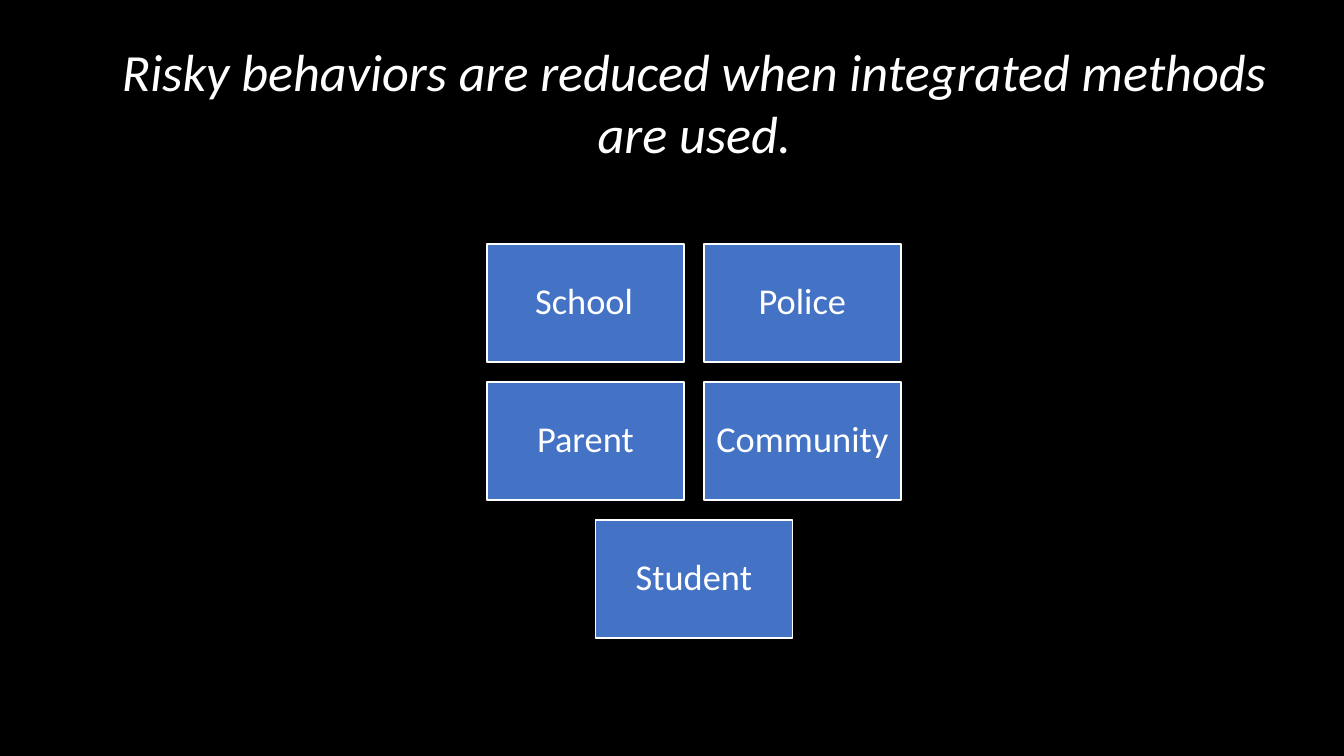
from pptx import Presentation
from pptx.dml.color import RGBColor
from pptx.enum.shapes import MSO_SHAPE as Shape
from pptx.enum.text import MSO_ANCHOR as Anchor, MSO_AUTO_SIZE as AutoSize, PP_ALIGN as Align
from pptx.util import Emu, Pt

TITLE = "Risky behaviors are reduced when integrated methods are used."
ROWS = [["School\t", "Police"], ["Parent", "Community"], ["Student"]]
BLACK, WHITE, BLUE = "000000", "FFFFFF", "4472C4"
SLIDE_WIDTH, SLIDE_HEIGHT = 1344, 756
TITLE_BOX = (90, 26, 1209, 124)
CENTER, TOP = 694, 244
BOX_WIDTH, BOX_HEIGHT, GAP = 197, 118, 20


def px(length):
    return Emu(round(length * 914400 / 100.8))


def color(value):
    return RGBColor.from_string(value)


def write(shape, text, size, inset, anchor, italic=False):
    frame = shape.text_frame
    frame.word_wrap = True
    frame.auto_size = AutoSize.NONE
    frame.vertical_anchor = anchor
    frame.margin_left = frame.margin_right = px(inset)
    frame.margin_top = frame.margin_bottom = px(inset)
    frame.text = text
    paragraph = frame.paragraphs[0]
    paragraph.alignment = Align.CENTER
    font = paragraph.font
    font.name, font.size, font.italic = "Calibri", Pt(size), italic
    font.color.rgb = color(WHITE)
    return paragraph


def add_box(slide, text, left, top):
    box = slide.shapes.add_shape(
        Shape.RECTANGLE, px(left), px(top), px(BOX_WIDTH), px(BOX_HEIGHT))
    box.shadow.inherit = False
    box.fill.solid()
    box.fill.fore_color.rgb = color(BLUE)
    box.line.color.rgb = color(WHITE)
    box.line.width = Pt(1)
    write(box, text, 26, 11, Anchor.MIDDLE).line_spacing = 0.9


def main():
    presentation = Presentation()
    presentation.slide_width = px(SLIDE_WIDTH)
    presentation.slide_height = px(SLIDE_HEIGHT)
    slide = presentation.slides.add_slide(presentation.slide_layouts[5])
    slide.background.fill.solid()
    slide.background.fill.fore_color.rgb = color(BLACK)

    title = slide.shapes.title
    title.left, title.top, title.width, title.height = map(px, TITLE_BOX)
    write(title, TITLE, 37.3, 13, Anchor.TOP, italic=True)

    for row, labels in enumerate(ROWS):
        row_width = len(labels) * (BOX_WIDTH + GAP) - GAP
        for column, label in enumerate(labels):
            left = CENTER - row_width / 2 + column * (BOX_WIDTH + GAP)
            add_box(slide, label, left, TOP + row * (BOX_HEIGHT + GAP))

    presentation.save("out.pptx")


if __name__ == "__main__":
    main()
